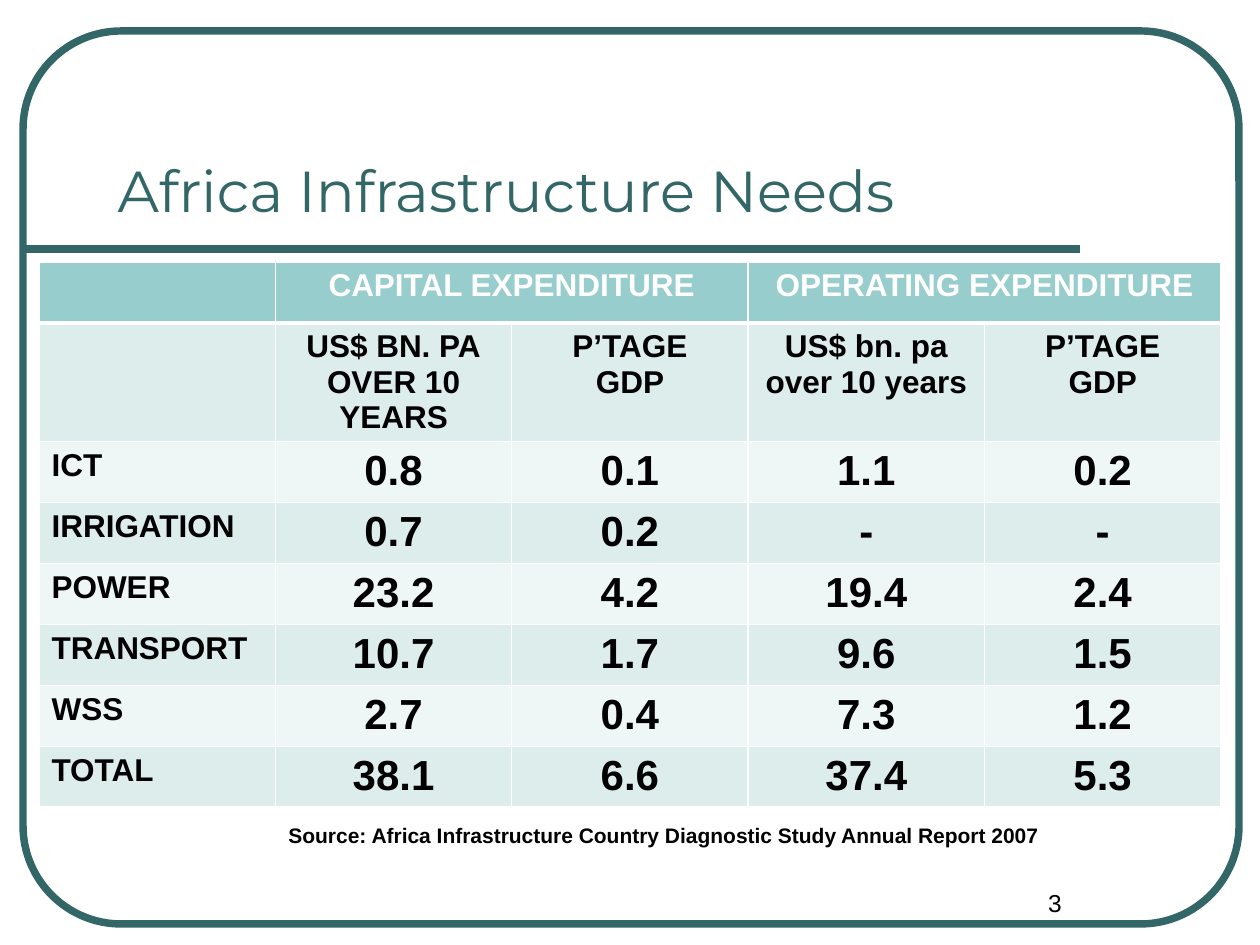
from lxml.etree import SubElement
from pptx import Presentation
from pptx.dml.color import RGBColor
from pptx.enum.shapes import MSO_CONNECTOR, MSO_SHAPE
from pptx.enum.text import MSO_ANCHOR, MSO_AUTO_SIZE, PP_ALIGN
from pptx.oxml.ns import qn
from pptx.util import Pt

PX = 914400 / 126
TEAL = RGBColor(0x33, 0x66, 0x66)
HEADER = RGBColor(0x97, 0xCD, 0xCC)
BAND_DARK = RGBColor(0xDD, 0xED, 0xEC)
BAND_LIGHT = RGBColor(0xEF, 0xF6, 0xF6)
WHITE = RGBColor(0xFF, 0xFF, 0xFF)
BLACK = RGBColor(0, 0, 0)

TITLE = {"name": "Montserrat", "size": Pt(33), "bold": False}
LABEL = {"name": "Arial", "size": Pt(18), "bold": True}
VALUE = {"name": "Arial", "size": Pt(24), "bold": True}
SOURCE = {"name": "Arial", "size": Pt(12), "bold": True}
NUMBER = {"name": "Arial", "size": Pt(14), "bold": False}

ROWS = [
    ["", "CAPITAL EXPENDITURE", "", "OPERATING EXPENDITURE", ""],
    ["", "US$ BN. PA\nOVER 10 YEARS", "P’TAGE\nGDP", "US$ bn. pa\nover 10 years", "P’TAGE\nGDP"],
    ["ICT", "0.8", "0.1", "1.1", "0.2"],
    ["IRRIGATION", "0.7", "0.2", "-", "-"],
    ["POWER", "23.2", "4.2", "19.4", "2.4"],
    ["TRANSPORT", "10.7", "1.7", "9.6", "1.5"],
    ["WSS", "2.7", "0.4", "7.3", "1.2"],
    ["TOTAL", "38.1", "6.6", "37.4", "5.3"],
]


def px(*values):
    """Turn pixel lengths into a list of EMU."""
    return [round(v * PX) for v in values]


def write(tf, text, fmt, color, align=PP_ALIGN.LEFT):
    """Fill a text frame and format each of its paragraphs."""
    tf.text = text
    for p in tf.paragraphs:
        p.alignment = align
        for key, value in fmt.items():
            setattr(p.font, key, value)
        p.font.color.rgb = color


def add_frame(s, x, y, w, h):
    """Draw the rounded border and the rule below the title."""
    sp = s.shapes.add_shape(MSO_SHAPE.ROUNDED_RECTANGLE, *px(x, y, w, h))
    sp.adjustments[0] = 0.11
    sp.shadow.inherit = False
    sp.fill.background()
    sp.line.color.rgb = TEAL
    sp.line.width = Pt(4.25)
    rule = s.shapes.add_connector(MSO_CONNECTOR.STRAIGHT, *px(x - 3, y + 218, x + 1057, y + 218))
    rule.line.color.rgb = TEAL
    rule.line.width = Pt(4.5)
    SubElement(rule._element.spPr, qn("a:effectLst"))


def add_title(s, x, y, w, h):
    """Place the title at the bottom of its box."""
    title = s.shapes.title
    title.left, title.top, title.width, title.height = px(x, y, w, h)
    tf = title.text_frame
    tf.auto_size = MSO_AUTO_SIZE.NONE
    tf.vertical_anchor = MSO_ANCHOR.BOTTOM
    write(tf, "Africa Infrastructure Needs", TITLE, TEAL)


def set_borders(cell, widths):
    """Give the cell white borders with widths in points by side."""
    tc_pr = cell._tc.get_or_add_tcPr()
    for side, width in widths.items():
        ln = SubElement(tc_pr, qn(f"a:ln{side}"), w=str(Pt(width)))
        fill = SubElement(ln, qn("a:solidFill"))
        SubElement(fill, qn("a:srgbClr"), val=str(WHITE))


def add_needs_table(s, x, y, w, row_h, subhead_h):
    """Build the banded table of spending needs."""
    n_rows, n_cols = len(ROWS), len(ROWS[0])
    heights = [subhead_h if r == 1 else row_h for r in range(n_rows)]
    table = s.shapes.add_table(n_rows, n_cols, *px(x, y, w, sum(heights))).table
    for col in table.columns:
        col.width = px(w / n_cols)[0]
    for r, (row, height) in enumerate(zip(ROWS, heights)):
        table.rows[r].height = px(height)[0]
        for c, text in enumerate(row):
            cell = table.cell(r, c)
            set_borders(cell, {"L": 1, "R": 1, "T": 3 if r == 1 else 1, "B": 3 if r == 0 else 1})
            cell.fill.solid()
            cell.fill.fore_color.rgb = HEADER if r == 0 else BAND_DARK if r % 2 else BAND_LIGHT
            write(
                cell.text_frame,
                text,
                VALUE if r > 1 and c else LABEL,
                BLACK if r else WHITE,
                PP_ALIGN.CENTER if c else PP_ALIGN.LEFT,
            )
    for c in (1, 3):
        table.cell(0, c).merge(table.cell(0, c + 1))


def add_text(s, x, y, w, h, text, fmt, align=PP_ALIGN.LEFT):
    """Place a wrapped text box."""
    tf = s.shapes.add_textbox(*px(x, y, w, h)).text_frame
    tf.word_wrap = True
    write(tf, text, fmt, BLACK, align)


def main():
    """Build and save the slide."""
    prs = Presentation()
    prs.slide_width, prs.slide_height = px(1260, 945)
    s = prs.slides.add_slide(prs.slide_layouts[5])
    add_frame(s, 23, 31, 1216, 893)
    add_title(s, 105, 73, 1061, 157)
    add_needs_table(s, 39, 262, 1182, 61, 118)
    source = "Source: Africa Infrastructure Country Diagnostic Study Annual Report 2007"
    add_text(s, 276, 816, 788, 38, source, SOURCE)
    add_text(s, 945, 882, 220, 63, "3", NUMBER, PP_ALIGN.CENTER)
    prs.save("out.pptx")


if __name__ == "__main__":
    main()
